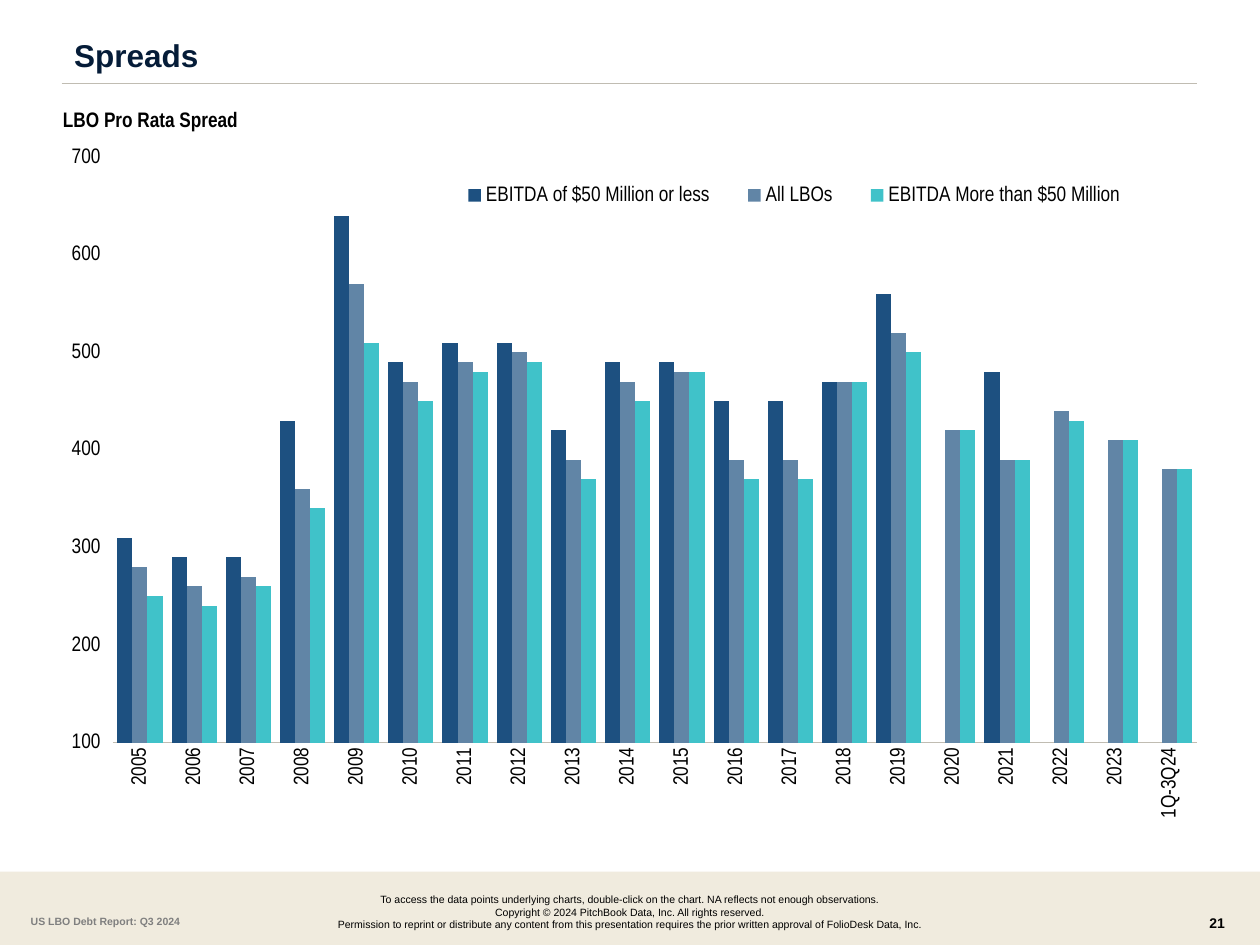
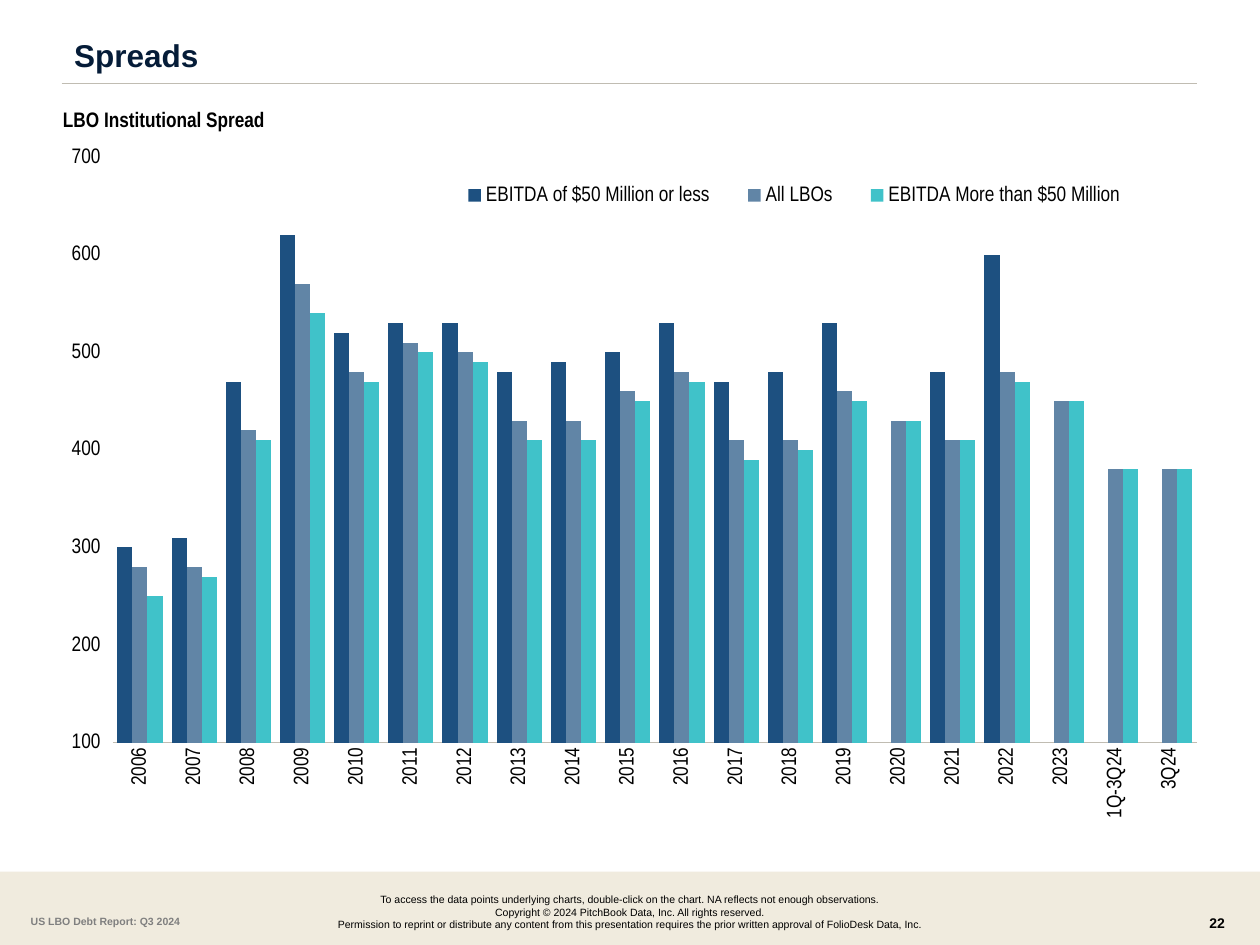
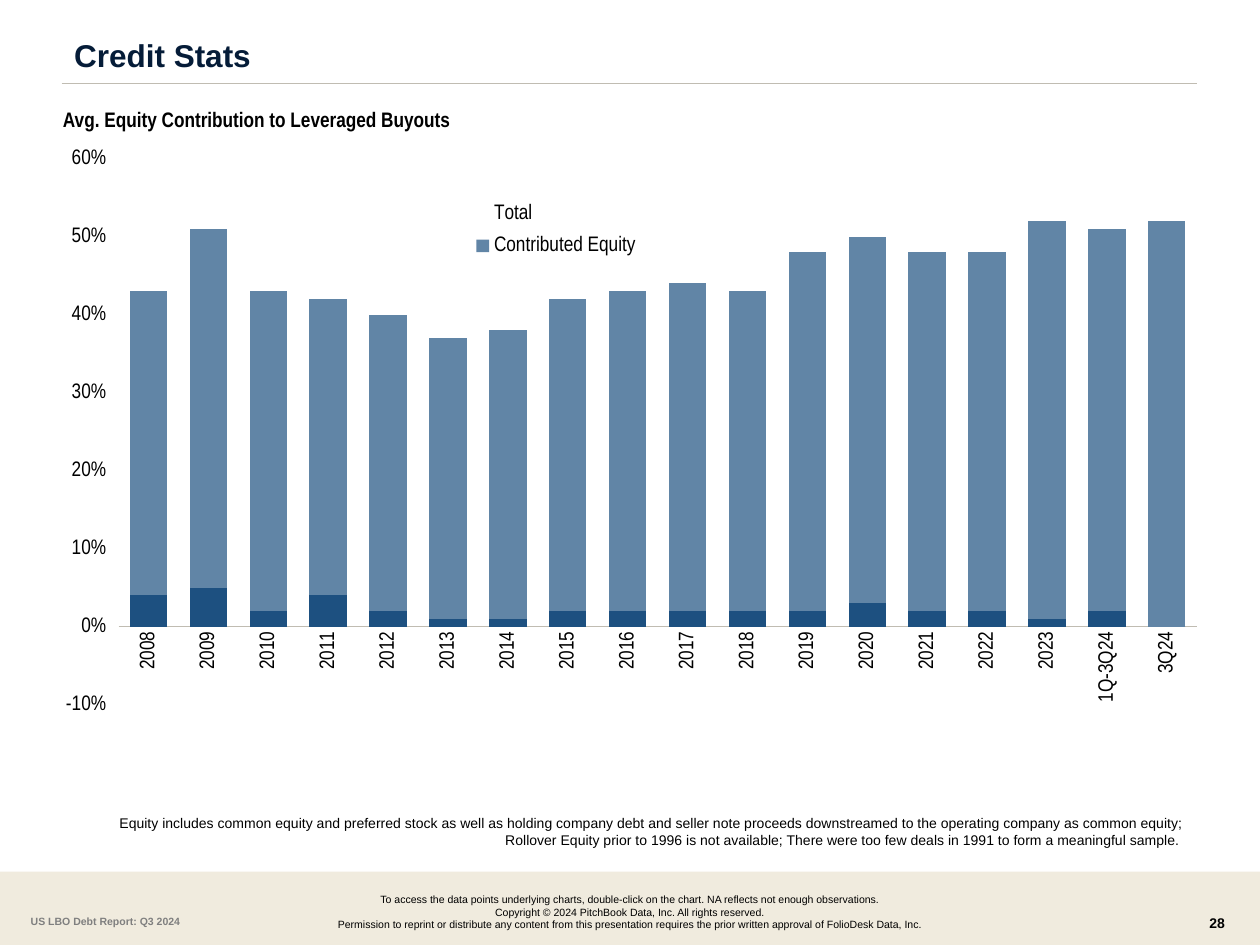
from lxml import etree
from pptx import Presentation
from pptx.chart.data import CategoryChartData
from pptx.dml.color import RGBColor
from pptx.enum.chart import XL_CHART_TYPE, XL_LEGEND_POSITION, XL_TICK_MARK
from pptx.enum.shapes import MSO_CONNECTOR, MSO_SHAPE
from pptx.enum.text import MSO_ANCHOR, MSO_AUTO_SIZE, PP_ALIGN
from pptx.oxml.ns import qn
from pptx.util import Cm, Pt

CLUSTERED = XL_CHART_TYPE.COLUMN_CLUSTERED
STACKED = XL_CHART_TYPE.COLUMN_STACKED
TOP, CORNER = XL_LEGEND_POSITION.TOP, XL_LEGEND_POSITION.CORNER
LEFT, CENTER, RIGHT = PP_ALIGN.LEFT, PP_ALIGN.CENTER, PP_ALIGN.RIGHT

# Shared style
SANS, NARROW = "Arial", "Arial Narrow"
BLACK, NAVY, GREY, RULE, SAND = "000000", "051C38", "7F7F7F", "C0BCB2", "F0EBDE"
BLUE, STEEL, TEAL = "1D5080", "6185A6", "40C2C9"

# Boxes in cm: left, top, width, height
TITLE_BOX = (1.24, 0.69, 19.51, 0.79)
SUBTITLE_BOX = (1.27, 1.96, 12.19, 0.79)
CHART_BOX = (1.27, 2.75, 22.86, 13.97)
NOTE_BOX = (1.47, 16.3, 22.66, 0.94)
BAND_BOX = (0, 17.57, 25.4, 1.48)
LEGAL_BOX = (2.13, 17.88, 21.13, 1.02)
REPORT_BOX = (0.37, 18.32, 3.91, 0.51)
NUMBER_BOX = (24.13, 18.31, 1.07, 0.64)

# Content
REPORT = "US LBO Debt Report: Q3 2024"
LEGAL = [
    "To access the data points underlying charts, double-click on the chart. NA reflects not enough observations.",
    "Copyright © 2024 PitchBook Data, Inc. All rights reserved.",
    "Permission to reprint or distribute any content from this presentation requires the prior written approval of FolioDesk Data, Inc.",
]
SMALL, ALL, LARGE = "EBITDA of $50 Million or less", "All LBOs", "EBITDA More than $50 Million"
EQUITY_NOTE = (
    "Equity includes common equity and preferred stock as well as holding company debt and seller note "
    "proceeds downstreamed to the operating company as common equity; Rollover Equity prior to 1996 is "
    "not available; There were too few deals in 1991 to form a meaningful sample. "
)


def years(first, last):
    return [str(y) for y in range(first, last + 1)]


# Layouts are fractions of the chart: x, y, width, height
SPREAD_STYLE = dict(
    type=CLUSTERED, overlap=0, format="General", axis=dict(minimum_scale=100),
    plot=(0.044, 0.03, 0.956, 0.845),
    legend=TOP, legend_box=(0.33, 0.055, 0.63, 0.06), hidden_entries=[],
)
EQUITY_STYLE = dict(
    type=STACKED, overlap=100, format="0%",
    axis=dict(minimum_scale=-0.1, maximum_scale=0.6, major_unit=0.1),
    plot=(0.049, 0.032, 0.951, 0.788),
    legend=CORNER, legend_box=(0.35, 0.08, 0.17, 0.11), hidden_entries=[0],
)

SLIDES = [
    dict(
        number=21, title="Spreads", subtitle="LBO Pro Rata Spread", style=SPREAD_STYLE,
        cats=years(2005, 2023) + ["1Q-3Q24"],
        series=[
            (SMALL, BLUE, [310, 290, 290, 430, 640, 490, 510, 510, 420, 490,
                           490, 450, 450, 470, 560, 0, 480, 0, 0, 0]),
            (ALL, STEEL, [280, 260, 270, 360, 570, 470, 490, 500, 390, 470,
                          480, 390, 390, 470, 520, 420, 390, 440, 410, 380]),
            (LARGE, TEAL, [250, 240, 260, 340, 510, 450, 480, 490, 370, 450,
                           480, 370, 370, 470, 500, 420, 390, 430, 410, 380]),
        ],
    ),
    dict(
        number=22, title="Spreads", subtitle="LBO Institutional Spread", style=SPREAD_STYLE,
        cats=years(2006, 2023) + ["1Q-3Q24", "3Q24"],
        series=[
            (SMALL, BLUE, [300, 310, 470, 620, 520, 530, 530, 480, 490, 500,
                           530, 470, 480, 530, 0, 480, 600, 0, 0, 0]),
            (ALL, STEEL, [280, 280, 420, 570, 480, 510, 500, 430, 430, 460,
                          480, 410, 410, 460, 430, 410, 480, 450, 380, 380]),
            (LARGE, TEAL, [250, 270, 410, 540, 470, 500, 490, 410, 410, 450,
                           470, 390, 400, 450, 430, 410, 470, 450, 380, 380]),
        ],
    ),
    dict(
        number=28, title="Credit Stats", subtitle="Avg. Equity Contribution to Leveraged Buyouts",
        style=EQUITY_STYLE, note=EQUITY_NOTE,
        cats=years(2008, 2023) + ["1Q-3Q24", "3Q24"],
        series=[
            ("Series 1", BLUE, [0.04, 0.05, 0.02, 0.04, 0.02, 0.01, 0.01, 0.02, 0.02,
                                0.02, 0.02, 0.02, 0.03, 0.02, 0.02, 0.01, 0.02, 0]),
            ("Contributed Equity", STEEL, [0.39, 0.46, 0.41, 0.38, 0.38, 0.36, 0.37, 0.4, 0.41,
                                           0.42, 0.41, 0.46, 0.47, 0.46, 0.46, 0.51, 0.49, 0.52]),
            ("Total", None, [0.43, 0.51, 0.44, 0.42, 0.39, 0.37, 0.38, 0.42, 0.43,
                             0.44, 0.42, 0.47, 0.5, 0.48, 0.47, 0.52, 0.51, 0.52]),
        ],
    ),
]


def rgb(color):
    return RGBColor.from_string(color)


def cm(box):
    return [Cm(v) for v in box]


def style_font(font, size, color=BLACK, bold=False, name=SANS):
    font.name, font.size, font.bold = name, Pt(size), bold
    font.color.rgb = rgb(color)


def write(tf, text, size, color=BLACK, bold=False, name=SANS, align=LEFT, spacing=None):
    tf.word_wrap = True
    tf.text = text
    for p in tf.paragraphs:
        p.alignment = align
        p.line_spacing = spacing
        for r in p.runs:
            style_font(r.font, size, color, bold, name)


def add_text(s, box, text, size, **kw):
    tf = s.shapes.add_textbox(*cm(box)).text_frame
    write(tf, text, size, **kw)
    return tf


def add_frame(s, number):
    """Footer band, footer texts and the rule under the title."""
    band = s.shapes.add_shape(MSO_SHAPE.RECTANGLE, *cm(BAND_BOX))
    band.shadow.inherit = False
    band.fill.solid()
    band.fill.fore_color.rgb = rgb(SAND)
    band.line.fill.background()

    add_text(s, NUMBER_BOX, str(number), 8, bold=True)
    add_text(s, LEGAL_BOX, "\n".join(LEGAL), 6, align=CENTER)
    add_text(s, REPORT_BOX, REPORT, 6, color=GREY, bold=True)

    rule = s.shapes.add_connector(MSO_CONNECTOR.STRAIGHT, Cm(1.24), Cm(1.69), Cm(24.13), Cm(1.69))
    rule.line.color.rgb = rgb(RULE)
    rule.line.width = Pt(0.75)
    etree.SubElement(rule._element.spPr, qn("a:effectLst"))


def add_title(s, title, subtitle):
    ph = s.shapes.title
    ph.left, ph.top, ph.width, ph.height = cm(TITLE_BOX)
    tf = ph.text_frame
    tf.auto_size = MSO_AUTO_SIZE.NONE
    tf.vertical_anchor = MSO_ANCHOR.TOP
    write(tf, title, 18, color=NAVY, bold=True, spacing=0.9)

    tf = add_text(s, SUBTITLE_BOX, subtitle, 12, bold=True, name=NARROW, spacing=1.2)
    tf.margin_left = 0
    tf.vertical_anchor = MSO_ANCHOR.MIDDLE


def manual_layout(parent, box, inner=False):
    """Detached c:layout that replaces any layout of the parent."""
    for old in parent.findall(qn("c:layout")):
        parent.remove(old)
    layout = etree.Element(qn("c:layout"))
    manual = etree.SubElement(layout, qn("c:manualLayout"))
    values = [("layoutTarget", "inner")] if inner else []
    values += [("xMode", "edge"), ("yMode", "edge"), *zip("xywh", box)]
    for tag, value in values:
        etree.SubElement(manual, qn("c:" + tag)).set("val", str(value))
    return layout


def add_legend(chart, style):
    chart.has_legend = True
    legend = chart.legend
    legend.position = style["legend"]
    legend.include_in_layout = False
    style_font(legend.font, 12, name=NARROW)
    el = legend._element
    overlay = el.find(qn("c:overlay"))
    layout = manual_layout(el, style["legend_box"])
    for i in style["hidden_entries"]:
        entry = etree.Element(qn("c:legendEntry"))
        etree.SubElement(entry, qn("c:idx")).set("val", str(i))
        etree.SubElement(entry, qn("c:delete")).set("val", "1")
        overlay.addprevious(entry)
    overlay.addprevious(layout)


def add_chart(s, cats, series, style):
    data = CategoryChartData(number_format=style["format"])
    data.categories = cats
    for name, _, values in series:
        data.add_series(name, values)
    chart = s.shapes.add_chart(style["type"], *cm(CHART_BOX), data).chart
    chart.has_title = False
    style_font(chart.font, 12, name=NARROW)

    # Columns
    plot = chart.plots[0]
    plot.vary_by_categories = False
    plot.gap_width, plot.overlap = 60, style["overlap"]
    for ser, (_, color, _) in zip(plot.series, series):
        if color:
            ser.format.fill.solid()
            ser.format.fill.fore_color.rgb = rgb(color)
        else:
            ser.format.fill.background()
        ser.format.line.fill.background()

    # Axes
    cat, val = chart.category_axis, chart.value_axis
    for axis in (cat, val):
        axis.has_major_gridlines = False
        style_font(axis.tick_labels.font, 12, name=NARROW)
    cat.major_tick_mark = XL_TICK_MARK.NONE
    cat.format.line.color.rgb = rgb(RULE)
    cat.format.line.width = Pt(0.25)
    body = cat._element.find(qn("c:txPr")).find(qn("a:bodyPr"))
    body.set("rot", "-5400000")
    body.set("vert", "horz")
    val.major_tick_mark = XL_TICK_MARK.OUTSIDE
    val.format.line.fill.background()
    val.tick_labels.number_format = style["format"]
    val.tick_labels.number_format_is_linked = False
    for name, value in style["axis"].items():
        setattr(val, name, value)

    area = chart._chartSpace.chart.plotArea
    area.insert(0, manual_layout(area, style["plot"], inner=True))
    add_legend(chart, style)


def main():
    prs = Presentation()
    prs.slide_width, prs.slide_height = Cm(25.4), Cm(19.05)
    for content in SLIDES:
        s = prs.slides.add_slide(prs.slide_layouts[5])
        add_frame(s, content["number"])
        add_title(s, content["title"], content["subtitle"])
        if "note" in content:
            add_text(s, NOTE_BOX, content["note"], 8, align=RIGHT)
        add_chart(s, content["cats"], content["series"], content["style"])
    prs.save("out.pptx")


if __name__ == "__main__":
    main()
